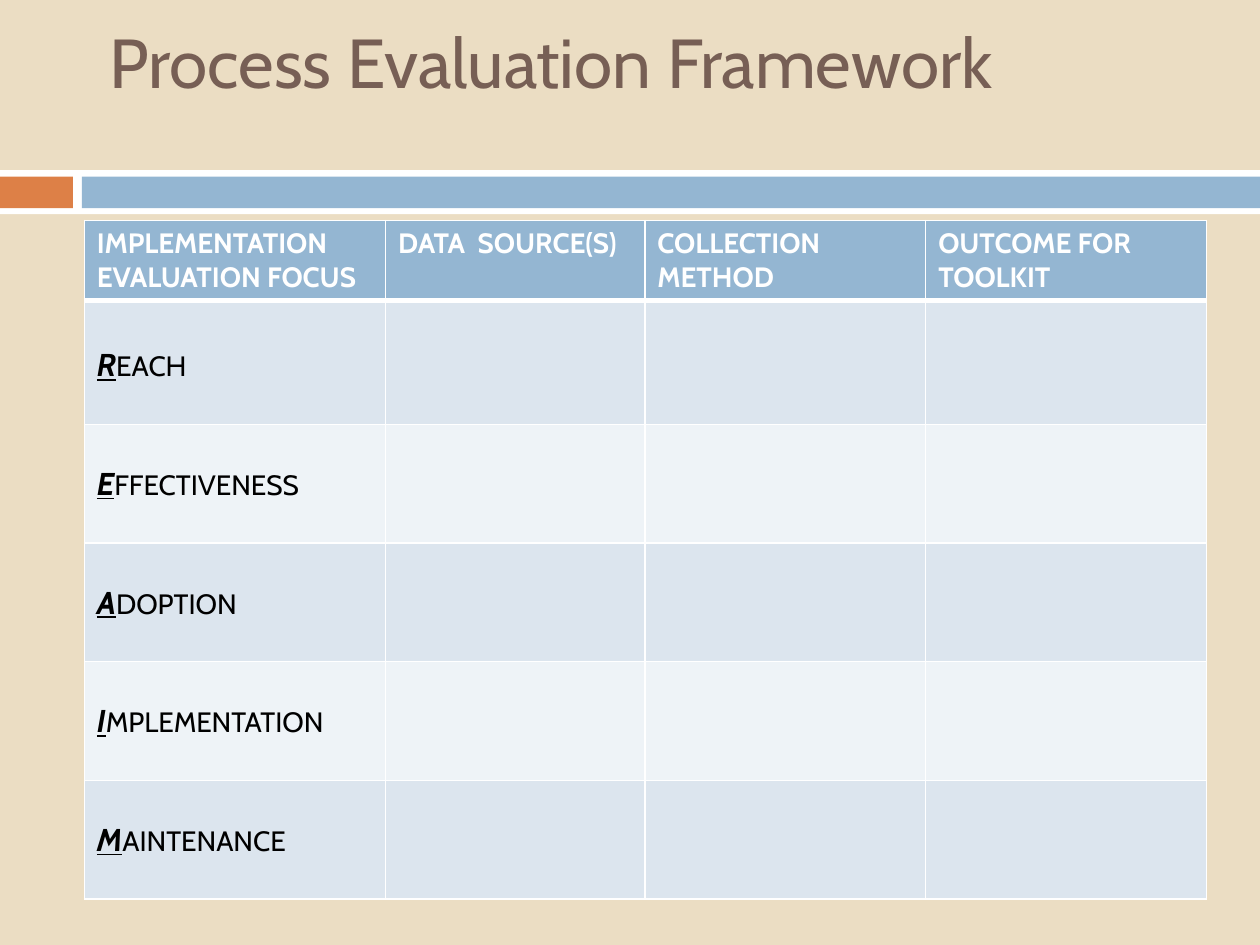
from lxml import etree
from pptx import Presentation
from pptx import util as u
from pptx.dml.color import RGBColor
from pptx.enum import shapes, text
from pptx.oxml import ns

COLORS = {
    "background": "EBDDC3", "white": "FFFFFF", "orange": "DD8047",
    "blue": "94B6D2", "title": "775F55", "black": "000000",
    "band_dark": "DCE5EE", "band_light": "EEF3F7",
}


def add_text(paragraph, wording, color, **formats):
    """Add a run in the slide's font with the given format values."""
    run = paragraph.add_run()
    run.text = wording
    run.font.color.rgb = RGBColor.from_string(COLORS[color])
    for name, value in {"name": "Cabin", **formats}.items():
        setattr(run.font, name, value)


def add_borders(cell, bottom_width):
    """Draw white cell borders; they must stand before the fill."""
    properties = cell._tc.get_or_add_tcPr()
    widths = {"a:lnL": 1, "a:lnR": 1, "a:lnT": 1, "a:lnB": bottom_width}
    for position, (tag, width) in enumerate(widths.items()):
        line = etree.Element(ns.qn(tag), w=str(u.Pt(width)))
        fill = etree.SubElement(line, ns.qn("a:solidFill"))
        etree.SubElement(fill, ns.qn("a:srgbClr"), val=COLORS["white"])
        properties.insert(position, line)


presentation = Presentation()
presentation.slide_width = u.Cm(25.4)
presentation.slide_height = u.Cm(19.05)
slide = presentation.slides.add_slide(presentation.slide_layouts[5])
slide.background.fill.solid()
slide.background.fill.fore_color.rgb = RGBColor.from_string(COLORS["background"])

# Band under the title: left, top, width, height in cm
bars = [
    ("white", 0, 3.43, 25.4, 0.89),
    ("orange", 0, 3.56, 1.47, 0.64),
    ("blue", 1.65, 3.56, 23.75, 0.64),
]
for color, *box in bars:
    shape = slide.shapes.add_shape(shapes.MSO_SHAPE.RECTANGLE, *map(u.Cm, box))
    shape.shadow.inherit = False
    shape.fill.solid()
    shape.fill.fore_color.rgb = RGBColor.from_string(COLORS[color])
    shape.line.fill.background()

# Title
title = slide.shapes.title
title.left, title.top, title.width, title.height = map(u.Cm, (1.7, 0.38, 22.66, 3))
title_format = {
    "word_wrap": True,
    "auto_size": text.MSO_AUTO_SIZE.NONE,
    "vertical_anchor": text.MSO_ANCHOR.TOP,
    "margin_left": u.Cm(0.5),
    "margin_top": 0,
}
for name, value in title_format.items():
    setattr(title.text_frame, name, value)
paragraph = title.text_frame.paragraphs[0]
paragraph.alignment = text.PP_ALIGN.LEFT
add_text(paragraph, "Process Evaluation Framework", "title", size=u.Pt(39.6))

# Table grid
headings = ["IMPLEMENTATION EVALUATION FOCUS", "DATA  SOURCE(S)",
            "COLLECTION METHOD", "OUTCOME FOR TOOLKIT"]
topics = ["REACH", "EFFECTIVENESS", "ADOPTION", "IMPLEMENTATION", "MAINTENANCE"]
column_widths = [6.07, 5.23, 5.66, 5.66]
row_heights = [1.62, 2.5] + [2.39] * 4
table = slide.shapes.add_table(
    len(row_heights), len(column_widths), u.Cm(1.7), u.Cm(4.44),
    u.Cm(sum(column_widths)), u.Cm(sum(row_heights))).table
for column, width in zip(table.columns, column_widths):
    column.width = u.Cm(width)
for row, height in zip(table.rows, row_heights):
    row.height = u.Cm(height)

# Cell fills and borders
for index, row in enumerate(table.rows):
    band = "blue" if index == 0 else "band_dark" if index % 2 else "band_light"
    for cell in row.cells:
        cell.fill.solid()
        cell.fill.fore_color.rgb = RGBColor.from_string(COLORS[band])
        add_borders(cell, 3 if index == 0 else 1)

# Header row
for cell, heading in zip(table.rows[0].cells, headings):
    add_text(cell.text_frame.paragraphs[0], heading, "white", size=u.Pt(16), bold=True)

# Topics, each with its initial stressed
for index, topic in enumerate(topics, start=1):
    cell = table.cell(index, 0)
    cell.vertical_anchor = text.MSO_ANCHOR.BOTTOM
    cell.margin_bottom = u.Cm(0.8)
    paragraph = cell.text_frame.paragraphs[0]
    add_text(paragraph, topic[0], "black", size=u.Pt(18),
             bold=True, italic=True, underline=True)
    add_text(paragraph, topic[1:], "black", size=u.Pt(16), bold=False)

presentation.save("out.pptx")
